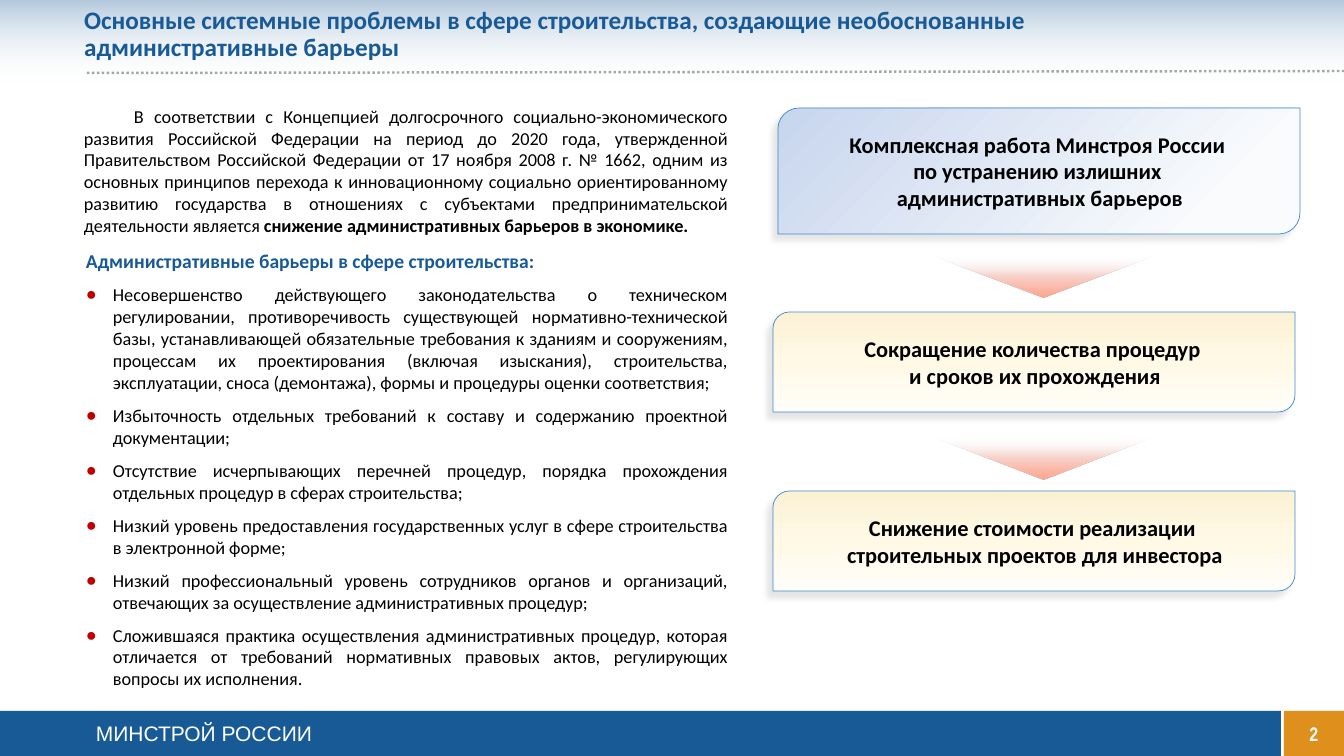
from dataclasses import dataclass

from lxml import etree
from pptx import Presentation, util as u
from pptx.dml.color import RGBColor
from pptx.enum import dml, shapes, text
from pptx.oxml import ns

PX = 914400 / 100.8  # EMU in one px
COLORS = {
    "blue": "185A96", "orange": "DE8F1C", "white": "FFFFFF", "black": "000000",
    "dots": "A6A6A6", "outline": "3E89CE", "bullet": "C00000",
}
LEFT, CENTER, JUSTIFY = text.PP_ALIGN.LEFT, text.PP_ALIGN.CENTER, text.PP_ALIGN.JUSTIFY
RECT = shapes.MSO_SHAPE.RECTANGLE


@dataclass(frozen=True)
class Gradient:
    angle: int
    stops: tuple  # (position %, colour, opacity %)


@dataclass(frozen=True)
class Box:
    x: int
    y: int
    w: int
    h: int


@dataclass(frozen=True)
class Style:
    size: float
    color: str = "black"
    bold: bool = False
    font: str = "Calibri"
    align: int = LEFT


@dataclass(frozen=True)
class Step:
    box: Box
    caption: str
    fill: Gradient


HEADER = Gradient(270, ((0, COLORS["white"], 0), (100, COLORS["blue"], 34)))
BLUE = Gradient(45, ((0, "C7D5ED", 100), (83, "F9FBFD", 100)))
CREAM = Gradient(90, ((0, "FBF1D5", 100), (50, "FFF9E6", 100), (100, "FFFDF9", 100)))
RED = Gradient(270, ((0, "FAFCFE", 0), (48, "F8D2C9", 100), (100, "FFA38D", 100)))

BODY = Style(13, align=JUSTIFY)
STRONG = Style(13, bold=True, align=JUSTIFY)
HEADING = Style(14, "blue", True)
STEP = Style(16, bold=True, align=CENTER)

TITLE = ("Основные системные проблемы в сфере строительства, создающие необоснованные \n"
         "административные барьеры")
INTRO = ("В соответствии с Концепцией долгосрочного социально-экономического развития "
         "Российской Федерации на период до 2020 года, утвержденной Правительством "
         "Российской Федерации от 17 ноября 2008 г. № 1662, одним из основных принципов "
         "перехода к инновационному социально ориентированному развитию государства в "
         "отношениях с субъектами предпринимательской деятельности является ")
INTRO_END = "снижение административных барьеров в экономике. "
BARRIERS_HEADING = "Административные барьеры в сфере строительства:"
BARRIERS = [
    "Несовершенство действующего законодательства о техническом регулировании, "
    "противоречивость существующей нормативно-технической базы, устанавливающей "
    "обязательные требования к зданиям и сооружениям, процессам их проектирования "
    "(включая изыскания), строительства, эксплуатации, сноса (демонтажа), формы и "
    "процедуры оценки соответствия;",
    "Избыточность отдельных требований к составу и содержанию проектной документации;",
    "Отсутствие исчерпывающих перечней процедур, порядка прохождения отдельных процедур "
    "в сферах строительства;",
    "Низкий уровень предоставления государственных услуг в сфере строительства в "
    "электронной форме;",
    "Низкий профессиональный уровень сотрудников органов и организаций, отвечающих за "
    "осуществление административных процедур;",
    "Сложившаяся практика осуществления административных процедур, которая отличается от "
    "требований нормативных правовых актов, регулирующих вопросы их исполнения.",
]
STEPS = [
    Step(Box(778, 108, 522, 126),
         "Комплексная работа Минстроя России \nпо устранению излишних \n"
         "административных барьеров", BLUE),
    Step(Box(773, 312, 522, 100),
         "Сокращение количества процедур \nи сроков их прохождения", CREAM),
    Step(Box(773, 491, 522, 100),
         "Снижение стоимости реализации \nстроительных проектов для инвестора", CREAM),
]
ARROWS = [Box(934, y, 219, 41) for y in (257, 438)]


def px(n: float) -> int:
    return round(n * PX)


def frame(b: Box) -> tuple:
    return px(b.x), px(b.y), px(b.w), px(b.h)


def add(parent, tag: str, **attrs):
    return etree.SubElement(parent, ns.qn(tag), {k: str(v) for k, v in attrs.items()})


def color_node(parent, color: str, opacity: int = 100) -> None:
    node = add(parent, "a:srgbClr", val=color)
    if opacity < 100:
        add(node, "a:alpha", val=opacity * 1000)


def set_gradient(s, gradient: Gradient) -> None:
    s.fill.background()
    empty = s._element.spPr.find(ns.qn("a:noFill"))
    grad = etree.Element(ns.qn("a:gradFill"), rotWithShape="1")
    stops = add(grad, "a:gsLst")
    for pos, color, opacity in gradient.stops:
        color_node(add(stops, "a:gs", pos=pos * 1000), color, opacity)
    add(grad, "a:lin", ang=gradient.angle * 60000, scaled=0)
    empty.getparent().replace(empty, grad)


def add_block(slide, kind, b: Box, fill):
    """Add a preset shape without outline, filled by a colour name or a Gradient."""
    s = slide.shapes.add_shape(kind, *frame(b))
    s.shadow.inherit = False
    s.line.fill.background()
    if isinstance(fill, Gradient):
        set_gradient(s, fill)
    else:
        s.fill.solid()
        s.fill.fore_color.rgb = RGBColor.from_string(COLORS[fill])
    return s


def write(p, content: str, style: Style) -> None:
    """Set the paragraph's text, with line breaks, and format its runs."""
    p.text = content
    p.alignment = style.align
    for r in p.runs:
        format_run(r, style)


def format_run(r, style: Style) -> None:
    for name, value in {"name": style.font, "size": u.Pt(style.size), "bold": style.bold}.items():
        setattr(r.font, name, value)
    r.font.color.rgb = RGBColor.from_string(COLORS[style.color])


def indent(p, left: int, first: int) -> None:
    pPr = p._p.get_or_add_pPr()
    pPr.set("marL", str(px(left)))
    pPr.set("indent", str(px(first)))


def add_bullet(p) -> None:
    pPr = p._p.get_or_add_pPr()
    color_node(add(pPr, "a:buClr"), COLORS["bullet"])
    add(pPr, "a:buFont", typeface="Arial")
    add(pPr, "a:buChar", char="●")


def add_text(slide, b: Box):
    tf = slide.shapes.add_textbox(*frame(b)).text_frame
    tf.word_wrap = True
    return tf


def add_step(slide, step: Step) -> None:
    s = add_block(slide, shapes.MSO_SHAPE.ROUND_2_DIAG_RECTANGLE, step.box, step.fill)
    s.line.color.rgb = RGBColor.from_string(COLORS["outline"])
    s.line.width = u.Pt(0.5)
    shadow = add(s._element.spPr.find(ns.qn("a:effectLst")), "a:outerShdw",
                 blurRad=u.Pt(4), dist=u.Pt(6), dir=135 * 60000, algn="tr", rotWithShape=0)
    color_node(shadow, COLORS["black"], 10)
    tf = s.text_frame
    tf.margin_left = px(12)
    write(tf.paragraphs[0], step.caption, STEP)


def add_frame(slide) -> None:
    """Add the header band, title, dotted rule and footer."""
    add_block(slide, RECT, Box(0, 0, 1344, 86), HEADER)
    add_block(slide, RECT, Box(0, 711, 1281, 45), "blue")
    number = add_block(slide, RECT, Box(1284, 711, 60, 45), "orange")
    write(number.text_frame.paragraphs[0], "2", Style(14, "white", True, "Arial Narrow", CENTER))
    footer = add_text(slide, Box(86, 716, 920, 35))
    write(footer.paragraphs[0], "МИНСТРОЙ РОССИИ", Style(15, "white", font="Arial"))

    title = slide.shapes.title
    title.left, title.top, title.width, title.height = frame(Box(74, 0, 1264, 70))
    tf = title.text_frame
    tf.auto_size = text.MSO_AUTO_SIZE.NONE
    tf.vertical_anchor = text.MSO_ANCHOR.MIDDLE
    write(tf.paragraphs[0], TITLE, Style(18, "blue", True))
    tf.paragraphs[0].line_spacing = 0.9
    slide.shapes._spTree.append(title._element)

    rule = slide.shapes.add_connector(shapes.MSO_CONNECTOR.STRAIGHT, px(87), px(73), px(1344), px(71))
    rule.line.color.rgb = RGBColor.from_string(COLORS["dots"])
    rule.line.width = u.Pt(1.75)
    rule.line.dash_style = dml.MSO_LINE.ROUND_DOT
    add(rule._element.spPr, "a:effectLst")


def main() -> None:
    prs = Presentation()
    prs.slide_width, prs.slide_height = px(1344), px(756)
    slide = prs.slides.add_slide(prs.slide_layouts[5])
    add_frame(slide)

    p = add_text(slide, Box(74, 100, 663, 142)).paragraphs[0]
    write(p, INTRO, BODY)
    r = p.add_run()
    r.text = INTRO_END
    format_run(r, STRONG)
    indent(p, 0, 50)

    tf = add_text(slide, Box(74, 244, 663, 455))
    p = tf.paragraphs[0]
    write(p, BARRIERS_HEADING, HEADING)
    indent(p, 40, -38)
    for barrier in BARRIERS:
        p = tf.add_paragraph()
        write(p, barrier, BODY)
        indent(p, 29, -27)
        add_bullet(p)
    for p in tf.paragraphs:
        p.space_after = u.Pt(8)

    for step in STEPS:
        add_step(slide, step)
    for arrow in ARROWS:
        add_block(slide, shapes.MSO_SHAPE.ISOSCELES_TRIANGLE, arrow, RED).rotation = 180
    prs.save("out.pptx")


if __name__ == "__main__":
    main()
